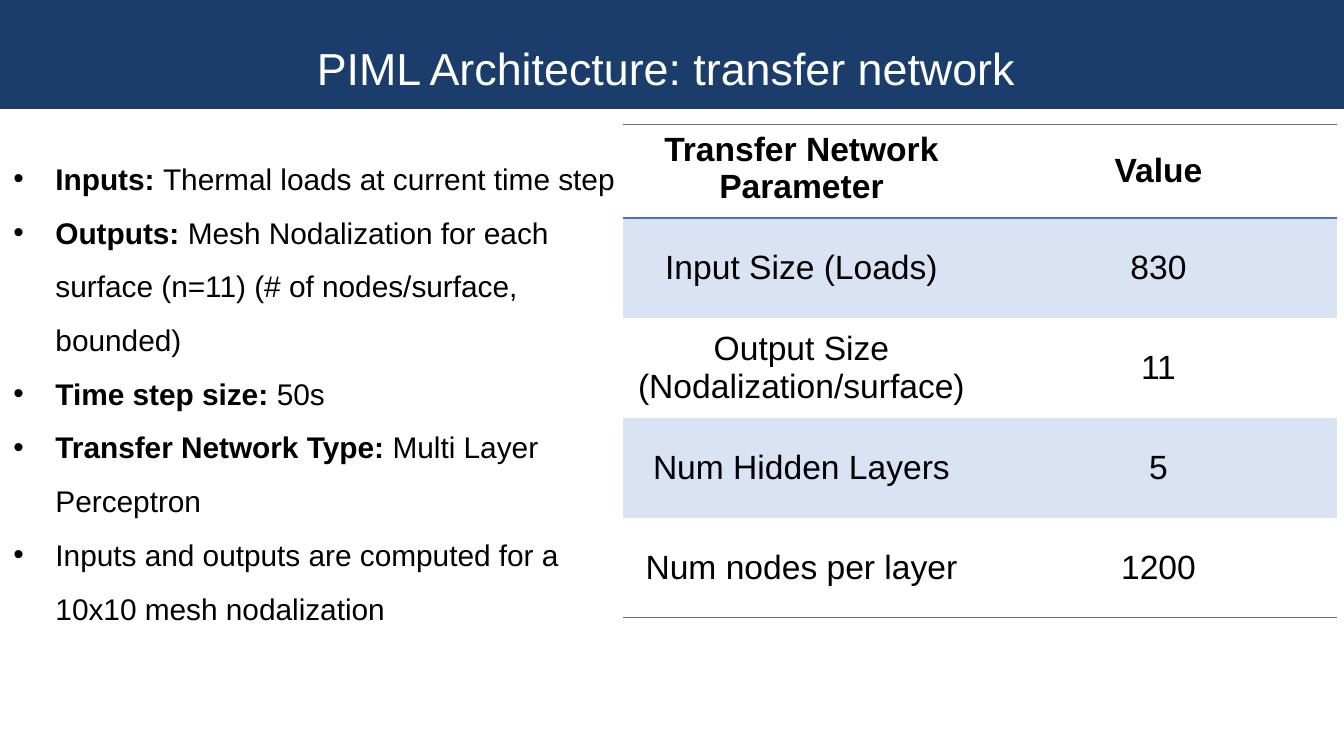
from lxml import etree
from pptx import Presentation
from pptx.dml.color import RGBColor
from pptx.enum.text import MSO_ANCHOR, MSO_AUTO_SIZE, PP_ALIGN
from pptx.oxml.ns import qn
from pptx.util import Pt

PX = 914400 / 134.4
CENTER = PP_ALIGN.CENTER
TOP, MIDDLE = MSO_ANCHOR.TOP, MSO_ANCHOR.MIDDLE
NO_GRID_STYLE = "{2D5ABB26-0587-4C30-8999-92F81FD0307C}"
NAVY, BLUE, BAND, GREY = "1B3D6C", "4472C4", "DAE3F3", "6E6E6E"
BLACK, WHITE = "000000", "FFFFFF"

TITLE = "PIML Architecture: transfer network "
BULLETS = [
    ("Inputs: ", "Thermal loads at current time step"),
    ("Outputs: ", "Mesh Nodalization for each surface (n=11) (# of nodes/surface, bounded)"),
    ("Time step size: ", "50s"),
    ("Transfer Network Type: ", "Multi Layer Perceptron"),
    ("", "Inputs and outputs are computed for a 10x10 mesh nodalization"),
]
ROWS = [
    ("Transfer Network Parameter", "Value"),
    ("Input Size (Loads)", "830"),
    ("Output Size (Nodalization/surface)", "11"),
    ("Num Hidden Layers", "5"),
    ("Num nodes per layer", "1200"),
]
HEADER_HEIGHT, ROW_HEIGHT, COLUMN_WIDTH = 94, 100, 357


def px(value):
    return round(value * PX)


def color(text):
    return RGBColor.from_string(text)


def place(shape, left, top, width, height):
    shape.left, shape.top = px(left), px(top)
    shape.width, shape.height = px(width), px(height)


def style(font, size, tint, bold=False):
    font.name, font.size, font.bold = "Arial", Pt(size), bold
    font.color.rgb = color(tint)


def add_bullet(para):
    props = para._p.get_or_add_pPr()
    props.set("marL", str(px(42)))
    props.set("indent", str(-px(42)))
    etree.SubElement(props, qn("a:buFont")).set("typeface", "Arial")
    etree.SubElement(props, qn("a:buChar")).set("char", "•")


def add_border(cell, side, tint, points):
    props = cell._tc.get_or_add_tcPr()
    line = etree.SubElement(props, qn("a:" + side))
    line.set("w", str(Pt(points)))
    fill = etree.SubElement(line, qn("a:solidFill"))
    etree.SubElement(fill, qn("a:srgbClr")).set("val", tint)


def fill_title(title):
    place(title, 0, 0, 1344, 109)
    title.fill.solid()
    title.fill.fore_color.rgb = color(NAVY)
    frame = title.text_frame
    frame.text = TITLE
    frame.auto_size = MSO_AUTO_SIZE.NONE
    frame.vertical_anchor = MIDDLE
    para = frame.paragraphs[0]
    para.alignment, para.line_spacing = CENTER, 1.5
    style(para.runs[0].font, 24, WHITE)


def fill_body(body):
    place(body, 0, 136, 630, 550)
    frame = body.text_frame
    frame.auto_size = MSO_AUTO_SIZE.NONE
    frame.vertical_anchor = TOP
    frame.text = "\n".join(label + detail for label, detail in BULLETS)
    for para, (label, detail) in zip(frame.paragraphs, BULLETS):
        para.text = label
        para.add_run().text = detail
        add_bullet(para)
        para.line_spacing, para.space_before = 1.5, Pt(0)
        for span in para.runs:
            style(span.font, 16, BLACK, span.text == label)


def add_parameters(page):
    last = len(ROWS) - 1
    frame = page.shapes.add_table(
        len(ROWS), 2, px(623), px(124), px(2 * COLUMN_WIDTH),
        px(HEADER_HEIGHT + last * ROW_HEIGHT))
    table = frame.table
    table._tbl.tblPr.find(qn("a:tableStyleId")).text = NO_GRID_STYLE
    for column in table.columns:
        column.width = px(COLUMN_WIDTH)
    for r, texts in enumerate(ROWS):
        table.rows[r].height = px(ROW_HEIGHT if r else HEADER_HEIGHT)
        for c, text in enumerate(texts):
            cell = table.cell(r, c)
            cell.text = text
            cell.vertical_anchor = MIDDLE if r or c else TOP
            para = cell.text_frame.paragraphs[0]
            para.alignment = CENTER
            style(para.runs[0].font, 18, BLACK, r == 0)
            if r == 0:
                add_border(cell, "lnT", GREY, 0.5)
                add_border(cell, "lnB", BLUE, 1)
            if r == last:
                add_border(cell, "lnB", GREY, 0.5)
            if r % 2:
                cell.fill.solid()
                cell.fill.fore_color.rgb = color(BAND)
            else:
                cell.fill.background()


def main():
    deck = Presentation()
    deck.slide_width, deck.slide_height = px(1344), px(756)
    page = deck.slides.add_slide(deck.slide_layouts[1])
    fill_title(page.shapes.title)
    add_parameters(page)
    fill_body(page.placeholders[1])
    deck.save("out.pptx")


if __name__ == "__main__":
    main()
